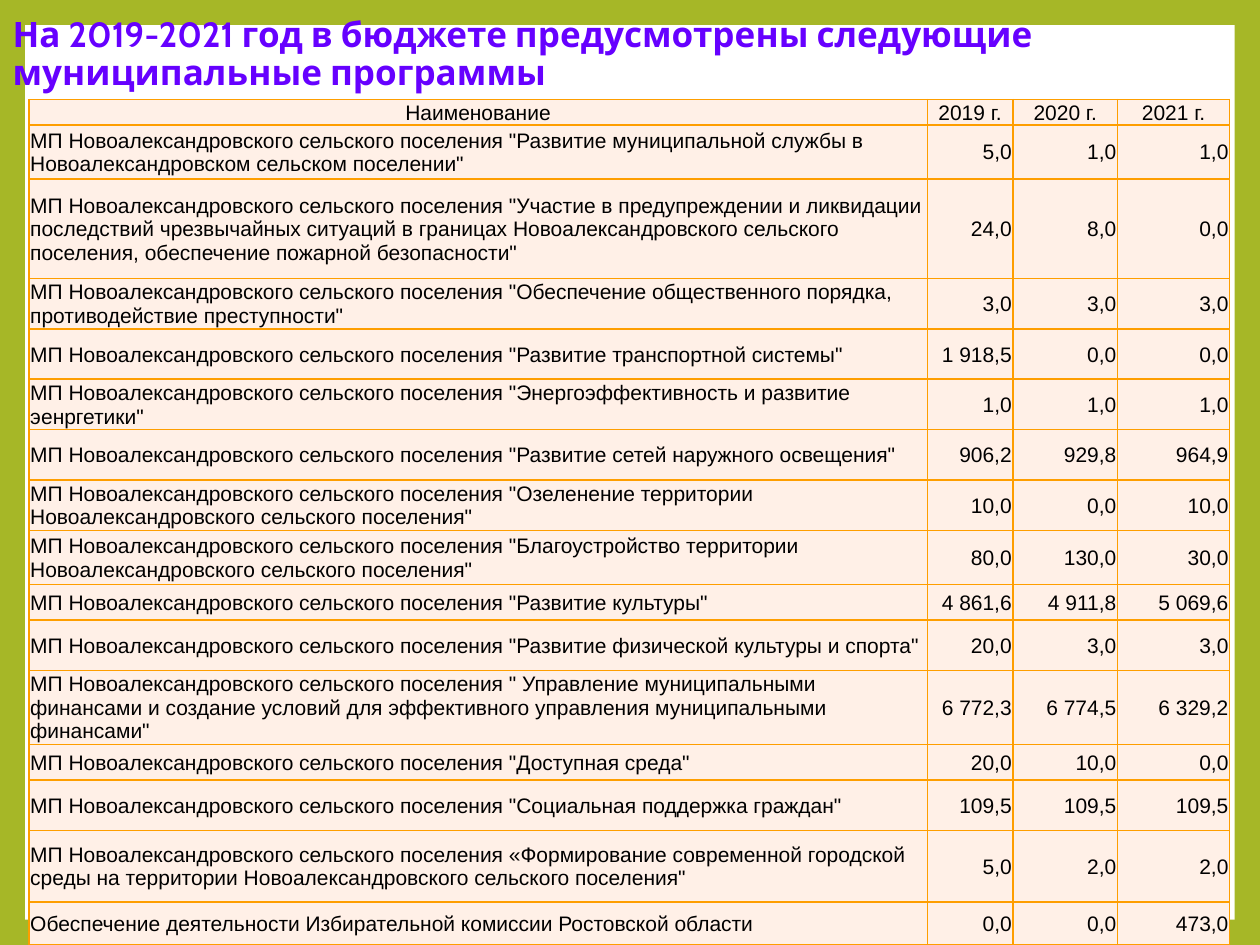
from typing import NamedTuple

from lxml.etree import SubElement
from pptx import Presentation
from pptx.dml.color import RGBColor
from pptx.enum.shapes import MSO_SHAPE
from pptx.enum.text import MSO_ANCHOR, PP_ALIGN
from pptx.oxml.ns import qn
from pptx.util import Inches, Pt

GREEN, WHITE, VIOLET = "A6B727", "FFFFFF", "6600FF"
ORANGE, CREAM, BLACK = "FE9E00", "FFF0E7", "000000"
PREFIX = "МП Новоалександровского сельского поселения"
HEADINGS = ("Наименование", "2019 г.", "2020 г.", "2021 г.")
COLUMN_WIDTHS = (7.13, 0.68, 0.83, 0.89)
HEADING_HEIGHT = 0.2


class Program(NamedTuple):
    name: str
    amounts: tuple[str, str, str]
    height: float = 0.4


PROGRAMS = [
    Program(f'{PREFIX} "Развитие муниципальной службы в Новоалександровском сельском поселении"',
            ("5,0", "1,0", "1,0"), 0.43),
    Program(f'{PREFIX} "Участие в предупреждении и ликвидации последствий чрезвычайных ситуаций '
            'в границах Новоалександровского сельского поселения, обеспечение пожарной безопасности"',
            ("24,0", "8,0", "0,0"), 0.79),
    Program(f'{PREFIX} "Обеспечение общественного порядка, противодействие преступности"',
            ("3,0", "3,0", "3,0")),
    Program(f'{PREFIX} "Развитие транспортной системы"', ("1 918,5", "0,0", "0,0")),
    Program(f'{PREFIX} "Энергоэффективность и развитие эенргетики"', ("1,0", "1,0", "1,0")),
    Program(f'{PREFIX} "Развитие сетей наружного освещения"', ("906,2", "929,8", "964,9")),
    Program(f'{PREFIX} "Озеленение территории Новоалександровского сельского поселения"',
            ("10,0", "0,0", "10,0")),
    Program(f'{PREFIX} "Благоустройство территории Новоалександровского сельского поселения"',
            ("80,0", "130,0", "30,0"), 0.43),
    Program(f'{PREFIX} "Развитие культуры"', ("4 861,6", "4 911,8", "5 069,6"), 0.28),
    Program(f'{PREFIX} "Развитие физической культуры и спорта"', ("20,0", "3,0", "3,0")),
    Program(f'{PREFIX} " Управление муниципальными финансами и создание условий '
            'для эффективного управления муниципальными финансами"',
            ("6 772,3", "6 774,5", "6 329,2"), 0.59),
    Program(f'{PREFIX} "Доступная среда"', ("20,0", "10,0", "0,0"), 0.28),
    Program(f'{PREFIX} "Социальная поддержка граждан"', ("109,5", "109,5", "109,5")),
    Program(f'{PREFIX} «Формирование современной городской среды на территории '
            'Новоалександровского сельского поселения"', ("5,0", "2,0", "2,0"), 0.57),
    Program("Обеспечение деятельности Избирательной комиссии Ростовской области",
            ("0,0", "0,0", "473,0"), 0.34),
]


def paint(fill, color: str) -> None:
    fill.solid()
    fill.fore_color.rgb = RGBColor.from_string(color)


def format_font(font, name: str, size: float, color: str, bold: bool = False) -> None:
    font.name, font.size, font.bold = name, Pt(size), bold
    font.color.rgb = RGBColor.from_string(color)


def add_borders(cell, color: str, width: float) -> None:
    properties = cell._tc.get_or_add_tcPr()
    for side in ("lnL", "lnR", "lnT", "lnB"):
        line = SubElement(properties, qn(f"a:{side}"), w=str(Pt(width)))
        SubElement(SubElement(line, qn("a:solidFill")), qn("a:srgbClr"), val=color)


def fill_cell(cell, text: str, alignment: PP_ALIGN) -> None:
    add_borders(cell, ORANGE, 1)
    paint(cell.fill, CREAM)
    cell.vertical_anchor = MSO_ANCHOR.MIDDLE
    cell.margin_left = cell.margin_right = cell.margin_top = Inches(0.01)
    cell.margin_bottom = 0
    cell.text_frame.text = text
    paragraph = cell.text_frame.paragraphs[0]
    paragraph.alignment = alignment
    format_font(paragraph.runs[0].font, "Arial", 12, BLACK)


def add_title(slide) -> None:
    title = slide.shapes.title
    title.left, title.top, title.width, title.height = 0, 0, Inches(10.2), Inches(0.87)
    frame = title.text_frame
    frame.text = "На 2019-2021 год в бюджете предусмотрены следующие муниципальные программы"
    frame.word_wrap = True
    frame.vertical_anchor = MSO_ANCHOR.MIDDLE
    paragraph = frame.paragraphs[0]
    paragraph.alignment = PP_ALIGN.LEFT
    paragraph.line_spacing = 0.9
    format_font(paragraph.runs[0].font, "Cabin", 20, VIOLET, bold=True)


def add_panel(slide) -> None:
    panel = slide.shapes.add_shape(MSO_SHAPE.RECTANGLE, Inches(0.2), Inches(0.2),
                                   Inches(9.6), Inches(7.1))
    panel.shadow.inherit = False
    paint(panel.fill, WHITE)
    panel.line.fill.background()
    # Send the panel behind the title
    slide.shapes.title._element.addprevious(panel._element)


def add_program_table(slide) -> None:
    heights = [HEADING_HEIGHT] + [program.height for program in PROGRAMS]
    table = slide.shapes.add_table(len(heights), len(HEADINGS), Inches(0.23), Inches(0.79),
                                   Inches(sum(COLUMN_WIDTHS)), Inches(sum(heights))).table
    for column, width in zip(table.columns, COLUMN_WIDTHS):
        column.width = Inches(width)
    for row, height in zip(table.rows, heights):
        row.height = Inches(height)

    # Heading row
    for cell, heading in zip(table.rows[0].cells, HEADINGS):
        fill_cell(cell, heading, PP_ALIGN.CENTER)

    # One row for each program: name, then yearly amounts
    for row_index, program in enumerate(PROGRAMS, start=1):
        fill_cell(table.cell(row_index, 0), program.name, PP_ALIGN.LEFT)
        for column_index, amount in enumerate(program.amounts, start=1):
            fill_cell(table.cell(row_index, column_index), amount, PP_ALIGN.RIGHT)


def main() -> None:
    presentation = Presentation()
    presentation.slide_width, presentation.slide_height = Inches(10), Inches(7.5)
    slide = presentation.slides.add_slide(presentation.slide_layouts[5])
    paint(slide.background.fill, GREEN)
    add_title(slide)
    add_panel(slide)
    add_program_table(slide)
    presentation.save("out.pptx")


if __name__ == "__main__":
    main()
